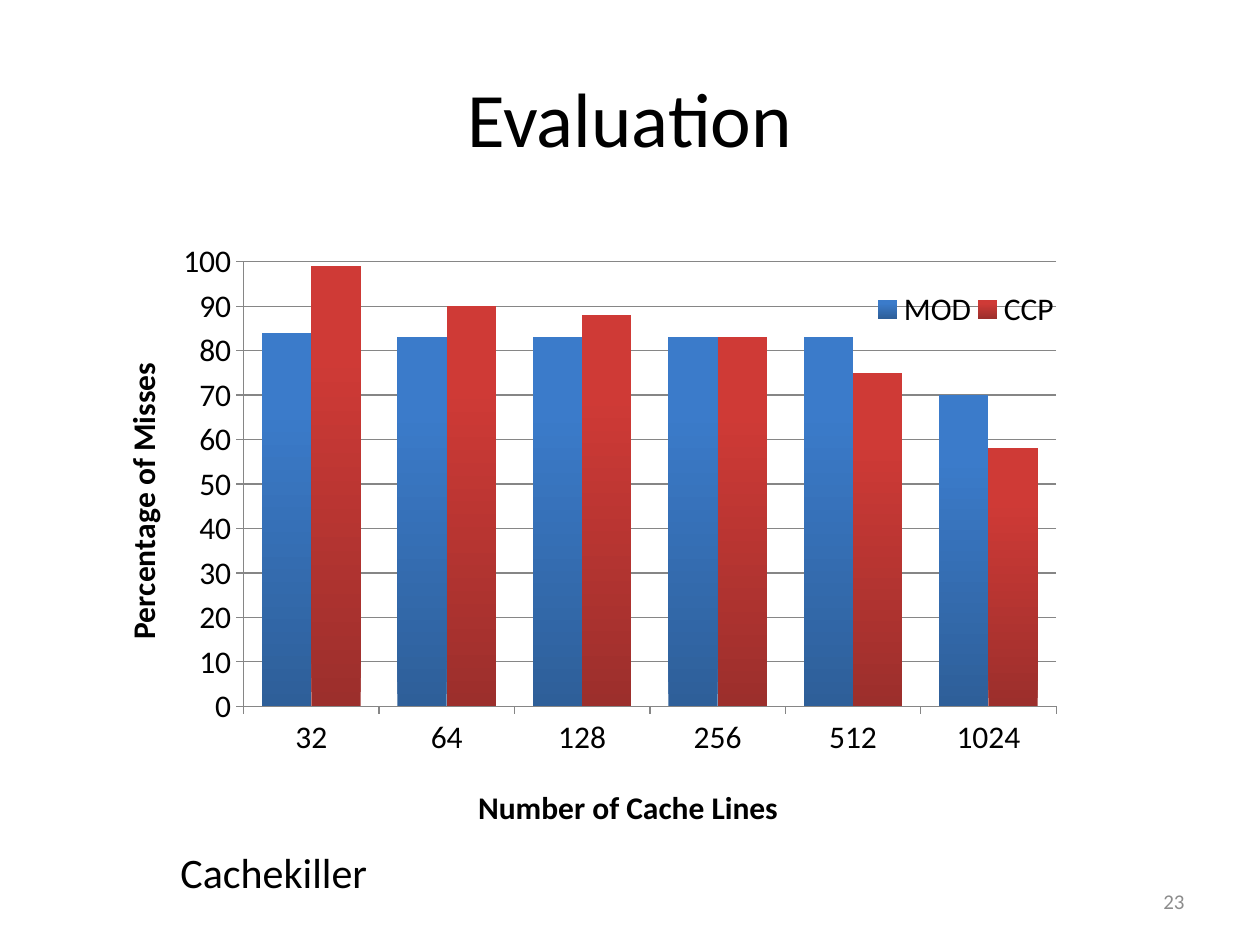
from lxml.etree import SubElement
from pptx import Presentation
from pptx.chart.data import CategoryChartData
from pptx.dml.color import RGBColor
from pptx.enum.chart import XL_CHART_TYPE, XL_LEGEND_POSITION, XL_TICK_MARK
from pptx.enum.text import MSO_ANCHOR, PP_ALIGN
from pptx.oxml.ns import qn
from pptx.util import Pt

FONT = "Calibri"
COLORS = {
    "text": "000000", "number": "8C8C8C", "axis": "868686",
    "MOD": ("2E5F99", "3B7BCA"), "CCP": ("9C2F2C", "CF3A36"),
}
LINE_COUNTS = ["32", "64", "128", "256", "512", "1024"]
MISSES = {"MOD": [84, 83, 83, 83, 83, 70], "CCP": [99, 90, 88, 83, 75, 58]}


def style_font(font, size, color="text", bold=False):
    """Set typeface, size, colour and weight of a font."""
    font.name, font.size, font.bold = FONT, Pt(size), bold
    font.color.rgb = RGBColor.from_string(COLORS[color])


def add_text(slide, box, text, size, color="text", align=PP_ALIGN.LEFT, anchor=MSO_ANCHOR.TOP):
    """Place one formatted line of text in a box."""
    frame = slide.shapes.add_textbox(*map(Pt, box)).text_frame
    frame.word_wrap = True
    frame.vertical_anchor = anchor
    paragraph = frame.paragraphs[0]
    paragraph.alignment = align
    run = paragraph.add_run()
    run.text = text
    style_font(run.font, size, color)


def set_layout(element, followers, target=None, **fractions):
    """Pin a chart part at fractions of the chart area."""
    for old in element.findall(qn("c:layout")):
        element.remove(old)
    layout = element.makeelement(qn("c:layout"))
    next_part = next((child for child in element if child.tag in map(qn, followers)), None)
    if next_part is None:
        element.append(layout)
    else:
        next_part.addprevious(layout)
    manual = SubElement(layout, qn("c:manualLayout"))
    if target:
        SubElement(manual, qn("c:layoutTarget")).set("val", target)
    for side in ("xMode", "yMode"):
        SubElement(manual, qn(f"c:{side}")).set("val", "edge")
    for side, fraction in fractions.items():
        SubElement(manual, qn(f"c:{side}")).set("val", str(fraction))


def style_axis(axis, title, x, y):
    """Format an axis and pin its bold title."""
    axis.major_tick_mark = XL_TICK_MARK.OUTSIDE
    axis.minor_tick_mark = XL_TICK_MARK.NONE
    axis.format.line.color.rgb = RGBColor.from_string(COLORS["axis"])
    axis.format.line.width = Pt(0.75)
    style_font(axis.tick_labels.font, 18)
    frame = axis.axis_title.text_frame
    frame.text = title
    style_font(frame.paragraphs[0].runs[0].font, 18, bold=True)
    set_layout(axis.axis_title._element, ["c:overlay", "c:spPr", "c:txPr"], x=x, y=y)


def add_misses_chart(slide, box):
    """Draw the cache miss columns in a box."""
    data = CategoryChartData()
    data.categories = LINE_COUNTS
    for mapping, values in MISSES.items():
        data.add_series(mapping, values)
    chart = slide.shapes.add_chart(XL_CHART_TYPE.COLUMN_CLUSTERED, *map(Pt, box), data).chart
    chart.has_title = False
    style_font(chart.font, 18)
    style_axis(chart.category_axis, "Number of Cache Lines", x=0.39, y=0.89)

    misses_axis = chart.value_axis
    style_axis(misses_axis, "Percentage of Misses", x=0.05, y=0.23)
    misses_axis.minimum_scale, misses_axis.maximum_scale, misses_axis.major_unit = 0, 100, 10
    gridline = misses_axis.major_gridlines.format.line
    gridline.color.rgb = RGBColor.from_string(COLORS["axis"])
    gridline.width = Pt(0.75)

    plot = chart.plots[0]
    plot.gap_width, plot.overlap, plot.vary_by_categories = 75, 0, False
    for series in plot.series:
        series.invert_if_negative = False
        fill = series.format.fill
        fill.gradient()
        fill.gradient_angle = 90
        for stop, color, position in zip(fill.gradient_stops, COLORS[series.name], (0, 0.8)):
            stop.color.rgb = RGBColor.from_string(color)
            stop.position = position

    chart.has_legend = True
    legend = chart.legend
    legend.position = XL_LEGEND_POSITION.RIGHT
    legend.include_in_layout = False
    style_font(legend.font, 18)
    set_layout(legend._element, ["c:overlay", "c:spPr", "c:txPr"], x=0.77, y=0.12, w=0.18, h=0.07)
    legend.include_in_layout = True
    set_layout(chart._chartSpace.chart.plotArea, ["c:barChart"], target="inner",
               x=0.172, y=0.081, w=0.774, h=0.694)


def build_evaluation_slide(presentation):
    """Build the evaluation slide."""
    slide = presentation.slides.add_slide(presentation.slide_layouts[6])
    add_text(slide, (36, 21.6, 648, 90), "Evaluation", 44,
             align=PP_ALIGN.CENTER, anchor=MSO_ANCHOR.MIDDLE)
    add_text(slide, (516, 500.4, 168, 28.8), "23", 12, "number",
             align=PP_ALIGN.RIGHT, anchor=MSO_ANCHOR.MIDDLE)
    add_misses_chart(slide, (36, 120, 600, 366))
    add_text(slide, (96, 480, 168, 36), "Cachekiller", 24)


def main():
    """Create and save the presentation."""
    presentation = Presentation()
    presentation.slide_width, presentation.slide_height = Pt(720), Pt(540)
    build_evaluation_slide(presentation)
    presentation.save("out.pptx")


if __name__ == "__main__":
    main()
